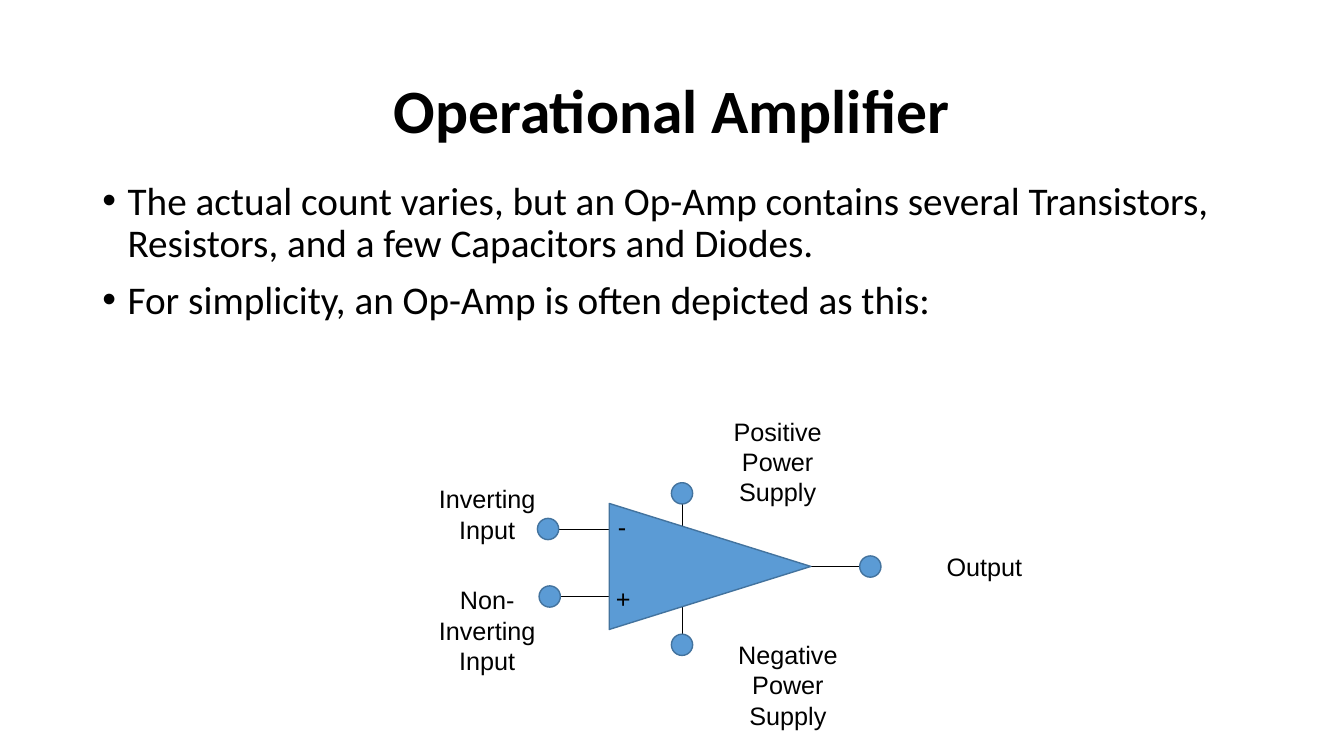
"""Build the operational amplifier slide."""
from pptx import Presentation
from pptx.dml.color import RGBColor
from pptx.enum.shapes import MSO_CONNECTOR as Connector, MSO_SHAPE as Shape
from pptx.enum.text import MSO_ANCHOR as Anchor, MSO_AUTO_SIZE as AutoSize, PP_ALIGN as Align
from pptx.oxml.ns import qn
from pptx.util import Pt
from lxml.etree import SubElement

BLACK = RGBColor(0x00, 0x00, 0x00)
BLUE = RGBColor(0x5B, 0x9B, 0xD5)
DARK_BLUE = RGBColor(0x43, 0x73, 0x9E)

TITLE = "Operational Amplifier"
BULLETS = (
    "The actual count varies, but an Op-Amp contains several Transistors, "
    "Resistors, and a few Capacitors and Diodes.",
    "For simplicity, an Op-Amp is often depicted as this:",
)
TERMINAL_RADIUS = 7.6
LEAD_NEAR, LEAD_FAR = 4.5, 43.6
TERMINALS = (
    (391.5, 377.9, 1, 0),
    (392.7, 426.1, 1, 0),
    (487.2, 352.4, 0, 1),
    (487.2, 460.6, 0, -1),
    (621.7, 404.7, -1, 0),
)
LABELS = (
    ("Non-Inverting Input", 288, 414, 120, 72.7, Align.CENTER),
    ("Inverting Input", 288, 342, 120, 50.9, Align.CENTER),
    ("Positive Power Supply", 495.5, 293.5, 120, 72.7, Align.CENTER),
    ("Negative Power Supply", 502.8, 453.2, 120, 72.7, Align.CENTER),
    ("Output", 643.2, 390.2, 120, 29.1, Align.CENTER),
    ("-", 434.2, 361.4, 36, 30, Align.LEFT),
    ("+", 432.8, 413.3, 84, 29.1, Align.LEFT),
)


def place(shape, left, top, width, height):
    """Move and size a shape, in points."""
    shape.left, shape.top = Pt(left), Pt(top)
    shape.width, shape.height = Pt(width), Pt(height)


def style_para(para, font_name, size, bold=False):
    """Format every run of a paragraph."""
    for span in para.runs:
        span.font.name = font_name
        span.font.size = Pt(size)
        span.font.bold = bold
        span.font.color.rgb = BLACK


def fill_title(title):
    """Write the centred slide title."""
    place(title, 66, 28.8, 828, 104.4)
    frame = title.text_frame
    frame.text = TITLE
    frame.auto_size = AutoSize.NONE
    frame.vertical_anchor = Anchor.MIDDLE
    para = frame.paragraphs[0]
    para.alignment = Align.CENTER
    para.line_spacing = 0.9
    style_para(para, "Calibri", 44, bold=True)


def fill_bullets(body):
    """Write the bulleted list."""
    place(body, 66, 126, 828, 210)
    frame = body.text_frame
    frame.text = "\n".join(BULLETS)
    frame.auto_size = AutoSize.NONE
    for para in frame.paragraphs:
        para.line_spacing = 0.9
        para.space_before = Pt(10)
        style_para(para, "Calibri", 28)
        properties = para._p.get_or_add_pPr()
        properties.set("marL", str(Pt(18)))
        properties.set("indent", str(-Pt(18)))


def add_symbol(shapes, kind, left, top, width, height):
    """Add a blue outlined shape."""
    symbol = shapes.add_shape(kind, Pt(left), Pt(top), Pt(width), Pt(height))
    symbol.shadow.inherit = False
    symbol.fill.solid()
    symbol.fill.fore_color.rgb = BLUE
    symbol.line.color.rgb = DARK_BLUE
    symbol.line.width = Pt(1)
    return symbol


def add_terminal(shapes, x, y, across, down):
    """Add a round terminal and its lead towards the amplifier."""
    lead = shapes.add_connector(
        Connector.STRAIGHT,
        Pt(x + across * LEAD_FAR), Pt(y + down * LEAD_FAR),
        Pt(x + across * LEAD_NEAR), Pt(y + down * LEAD_NEAR),
    )
    lead.line.color.rgb = BLACK
    lead.line.width = Pt(0.5)
    SubElement(lead._element.spPr, qn("a:effectLst"))
    diameter = 2 * TERMINAL_RADIUS
    add_symbol(shapes, Shape.OVAL, x - TERMINAL_RADIUS, y - TERMINAL_RADIUS,
               diameter, diameter)


def add_label(shapes, text, left, top, width, height, alignment):
    """Add a wrapped text label."""
    box = shapes.add_textbox(Pt(left), Pt(top), Pt(width), Pt(height))
    frame = box.text_frame
    frame.word_wrap = True
    frame.auto_size = AutoSize.SHAPE_TO_FIT_TEXT
    frame.text = text
    para = frame.paragraphs[0]
    para.alignment = alignment
    style_para(para, "Arial", 18)


def main():
    """Build and save the deck."""
    deck = Presentation()
    deck.slide_width, deck.slide_height = Pt(960), Pt(540)
    page = deck.slides.add_slide(deck.slide_layouts[1])
    fill_title(page.shapes.title)
    fill_bullets(page.placeholders[1])
    for terminal in TERMINALS:
        add_terminal(page.shapes, *terminal)
    amplifier = add_symbol(page.shapes, Shape.ISOSCELES_TRIANGLE, 462.2, 332.6, 90, 144)
    amplifier.rotation = 90
    for label in LABELS:
        add_label(page.shapes, *label)
    deck.save("out.pptx")


if __name__ == "__main__":
    main()
